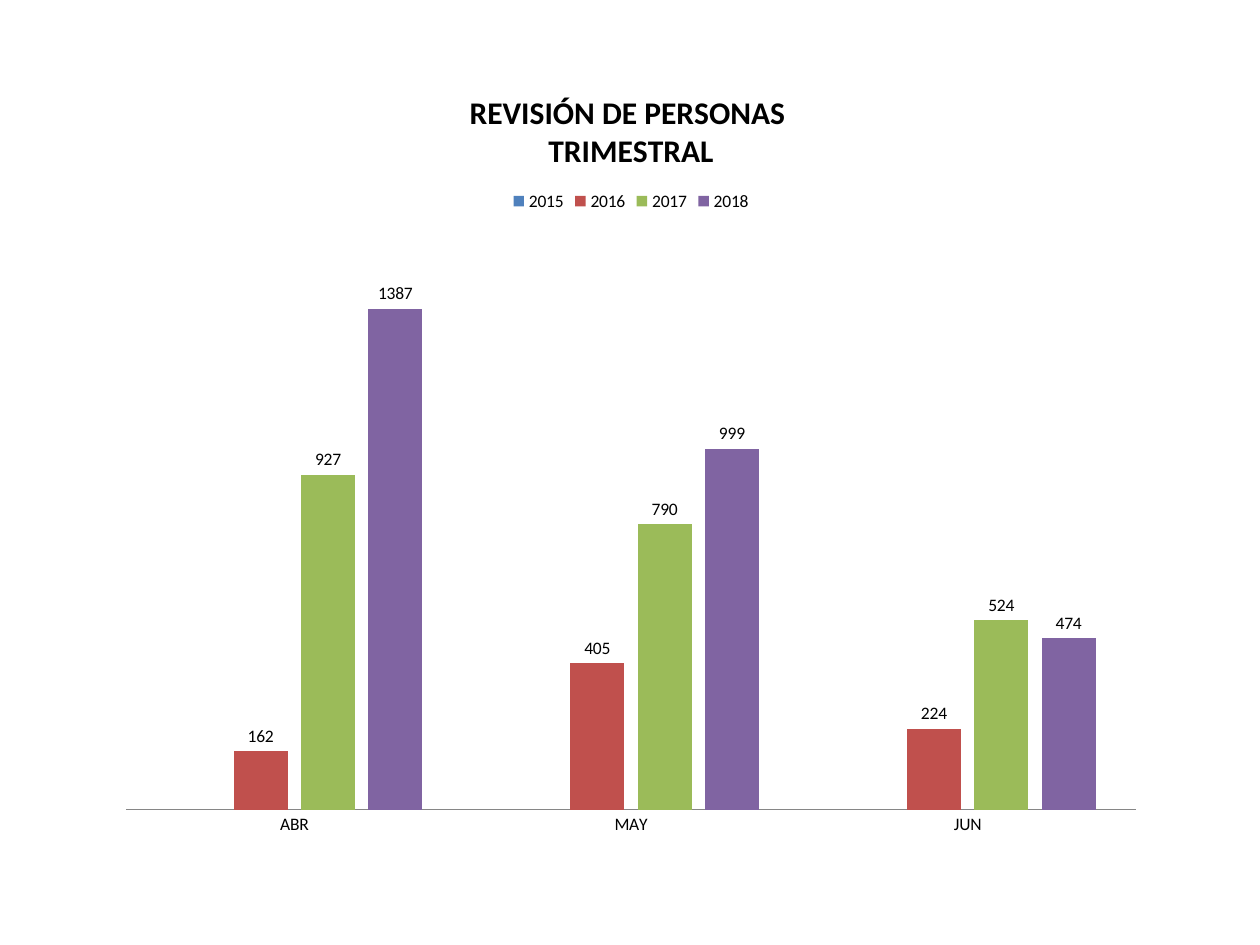
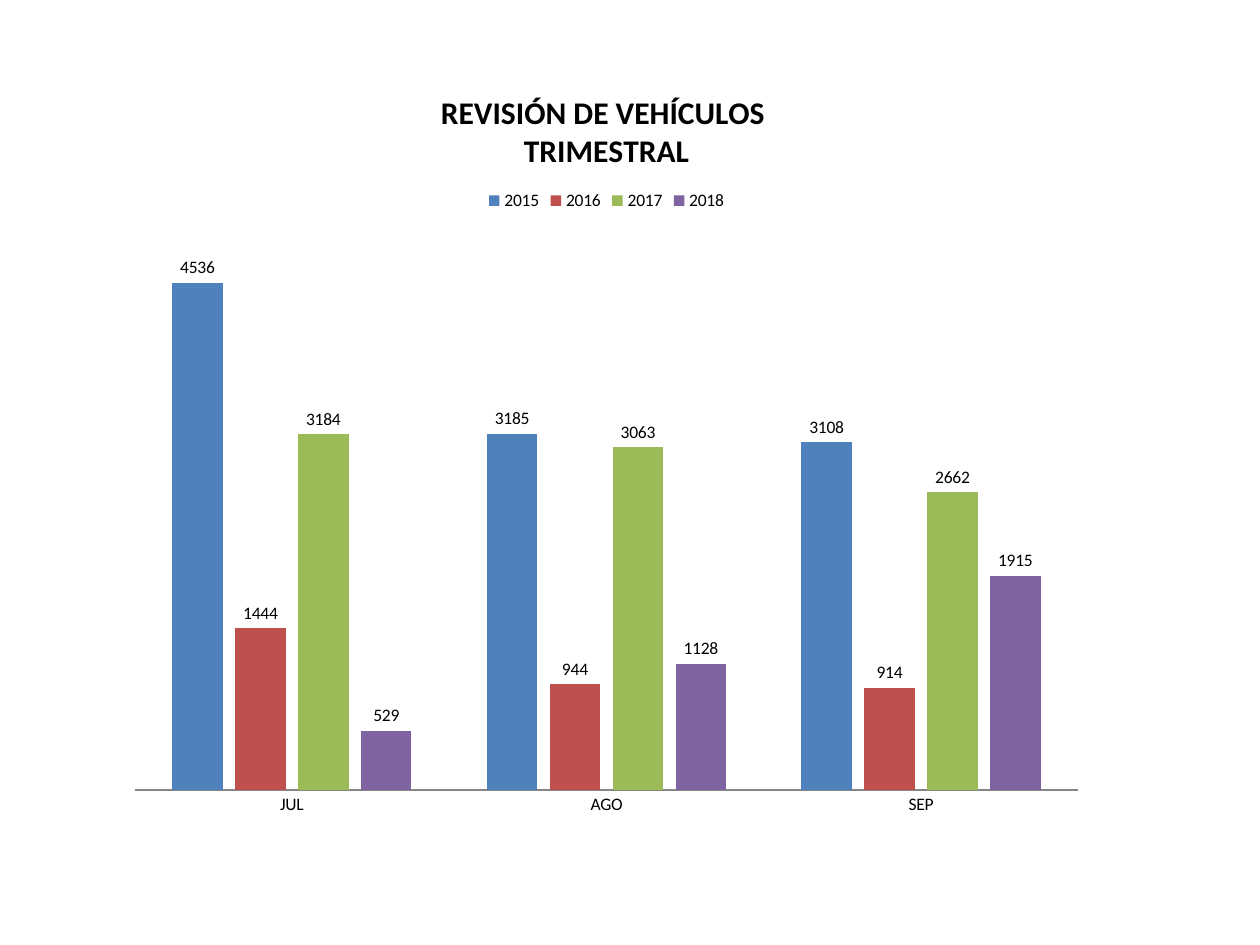
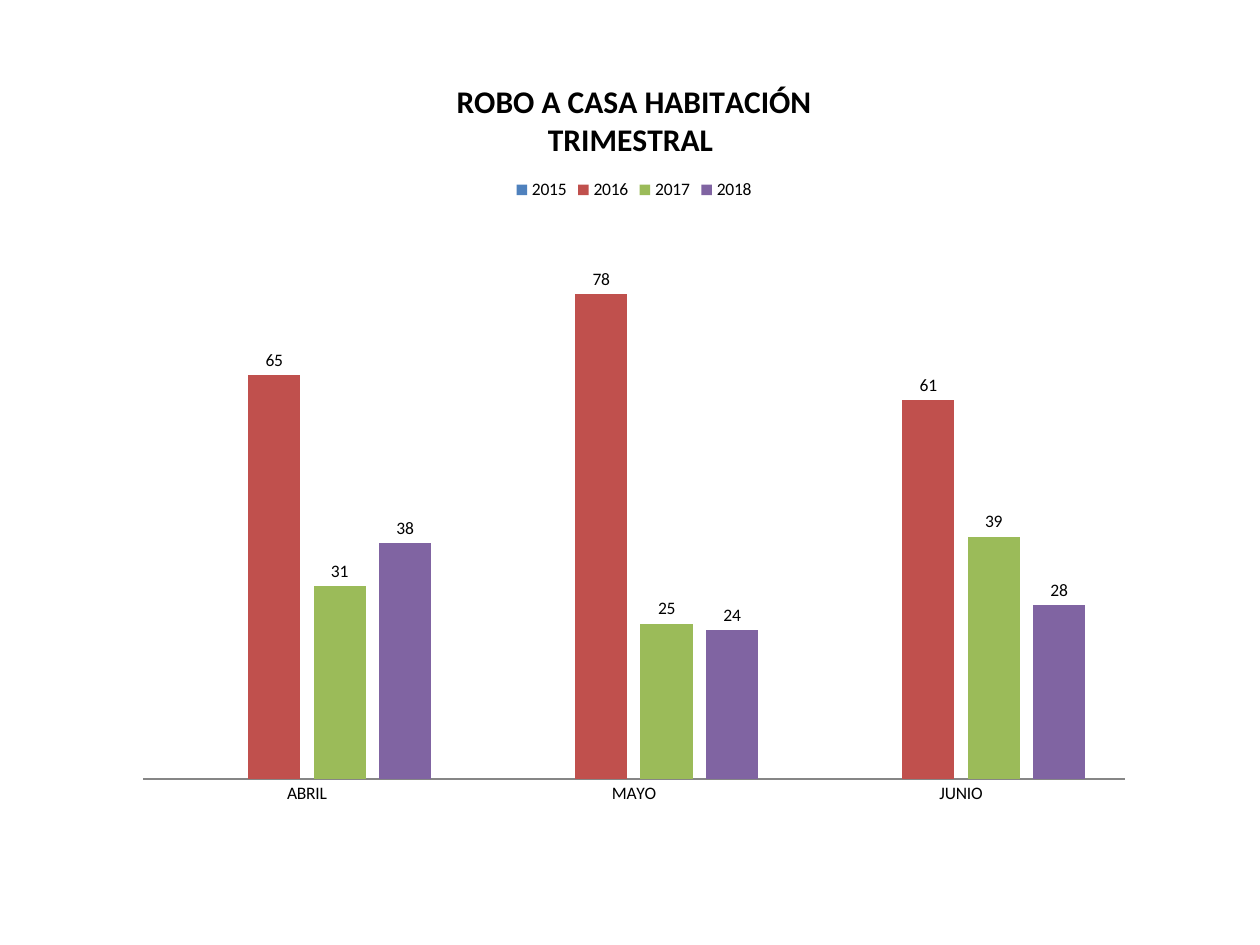
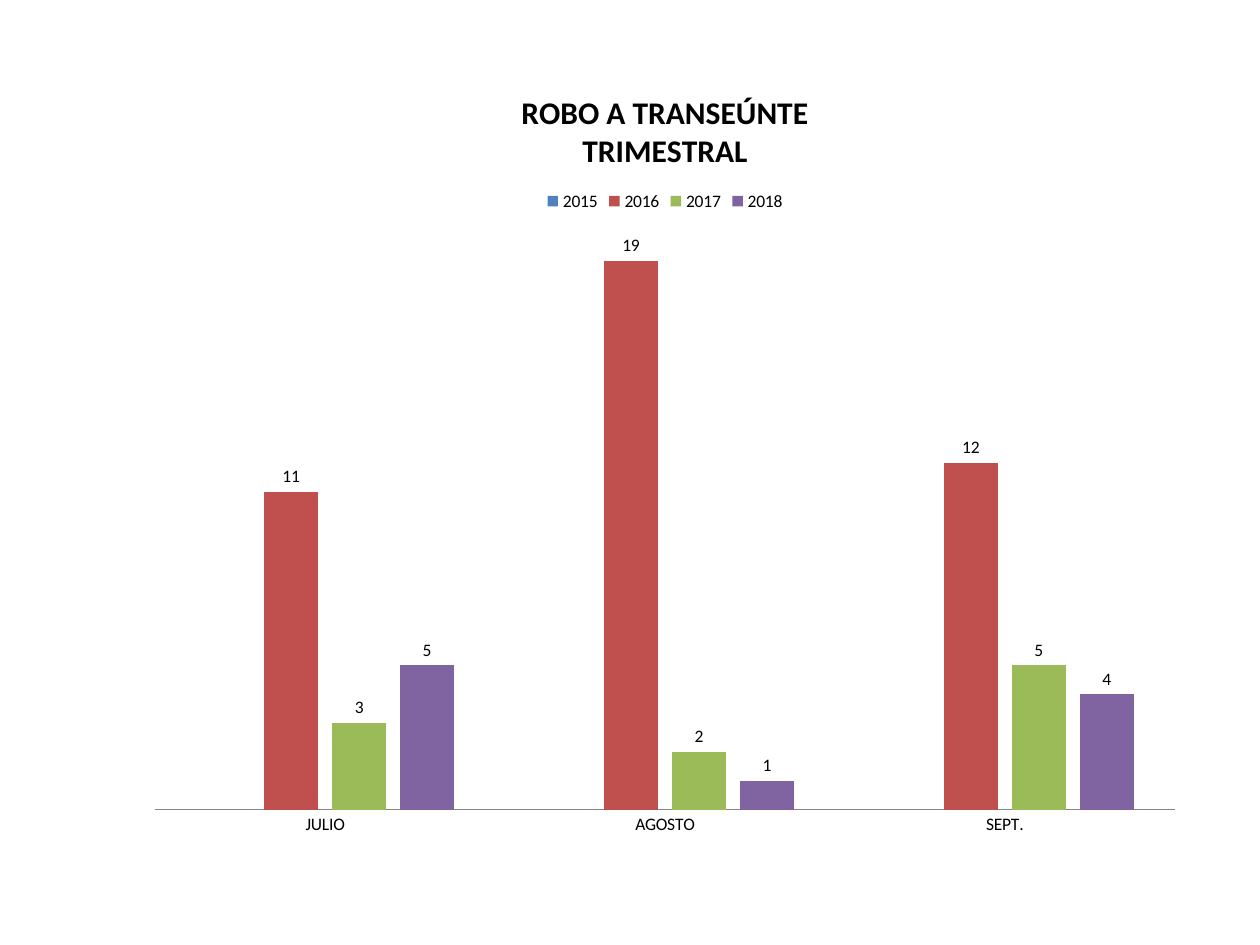
import dataclasses

import pptx
import pptx.chart.data
import pptx.dml.color
import pptx.enum.chart
import pptx.util

SCALE = 914400 / 126
YEARS = ("2015", "2016", "2017", "2018")
BLANK = (None, None, None)


@dataclasses.dataclass(frozen=True)
class Theme:
    font: str = "Calibri"
    ink: str = "000000"
    axis: str = "868686"
    bars: tuple = ("4F81BD", "C0504D", "9BBB59", "8064A2")
    title: int = 18
    text: int = 10
    line: float = 0.75


@dataclasses.dataclass(frozen=True)
class Report:
    box: tuple
    title: tuple
    months: tuple
    top: int
    rows: tuple


THEME = Theme()

REPORTS = (
    Report((105, 66, 1052, 784), ("REVISIÓN DE PERSONAS ", "TRIMESTRAL"),
           ("ABR", "MAY", "JUN"), 1600,
           (BLANK, (162, 405, 224), (927, 790, 524), (1387, 999, 474))),
    Report((115, 66, 983, 764), ("REVISIÓN DE VEHÍCULOS ", "TRIMESTRAL"),
           ("JUL", "AGO", "SEP"), 5000,
           ((4536, 3185, 3108), (1444, 944, 914), (3184, 3063, 2662), (529, 1128, 1915))),
    Report((123, 55, 1022, 764), ("ROBO A CASA HABITACIÓN", "TRIMESTRAL "),
           ("ABRIL", "MAYO", "JUNIO"), 90,
           (BLANK, (65, 78, 61), (31, 25, 39), (38, 24, 28))),
    Report((134, 66, 1062, 784), ("ROBO A TRANSEÚNTE", "TRIMESTRAL"),
           ("JULIO", "AGOSTO", "SEPT."), 20,
           (BLANK, (11, 19, 12), (3, 2, 5), (5, 1, 4))),
)


def px(size):
    return pptx.util.Emu(round(size * SCALE))


def rgb(code):
    return pptx.dml.color.RGBColor.from_string(code)


def style(font, size, bold=False):
    font.name = THEME.font
    font.size = pptx.util.Pt(size)
    font.bold = bold
    font.color.rgb = rgb(THEME.ink)


def add_title(chart, lines):
    chart.has_title = True
    chart.chart_title.include_in_layout = False
    frame = chart.chart_title.text_frame
    for spot, line in enumerate(lines):
        para = frame.add_paragraph() if spot else frame.paragraphs[0]
        run = para.add_run()
        run.text = line
        style(run.font, THEME.title, True)


def add_legend(chart):
    chart.has_legend = True
    chart.legend.position = pptx.enum.chart.XL_LEGEND_POSITION.TOP
    chart.legend.include_in_layout = False
    style(chart.legend.font, THEME.text)


def set_axes(chart, top):
    none = pptx.enum.chart.XL_TICK_MARK.NONE
    months = chart.category_axis
    months.major_tick_mark = none
    months.minor_tick_mark = none
    months.format.line.color.rgb = rgb(THEME.axis)
    months.format.line.width = pptx.util.Pt(THEME.line)
    style(months.tick_labels.font, THEME.text)
    count = chart.value_axis
    count.minimum_scale = 0
    count.maximum_scale = top
    count.has_major_gridlines = False
    count.visible = False


def set_bars(plot):
    plot.gap_width = 150
    plot.overlap = -25
    plot.vary_by_categories = False
    for series, color in zip(plot.series, THEME.bars):
        series.format.fill.solid()
        series.format.fill.fore_color.rgb = rgb(color)
        series.invert_if_negative = False
        labels = series.data_labels
        labels.show_value = True
        labels.position = pptx.enum.chart.XL_LABEL_POSITION.OUTSIDE_END
        style(labels.font, THEME.text)


def add_report(slide, report):
    data = pptx.chart.data.CategoryChartData()
    data.categories = report.months
    for year, row in zip(YEARS, report.rows):
        data.add_series(year, row)
    kind = pptx.enum.chart.XL_CHART_TYPE.COLUMN_CLUSTERED
    chart = slide.shapes.add_chart(kind, *map(px, report.box), data).chart
    style(chart.font, THEME.text)
    add_title(chart, report.title)
    add_legend(chart)
    set_axes(chart, report.top)
    set_bars(chart.plots[0])


def main():
    deck = pptx.Presentation()
    deck.slide_width = px(1260)
    deck.slide_height = px(945)
    for report in REPORTS:
        add_report(deck.slides.add_slide(deck.slide_layouts[6]), report)
    deck.save("out.pptx")


if __name__ == "__main__":
    main()
